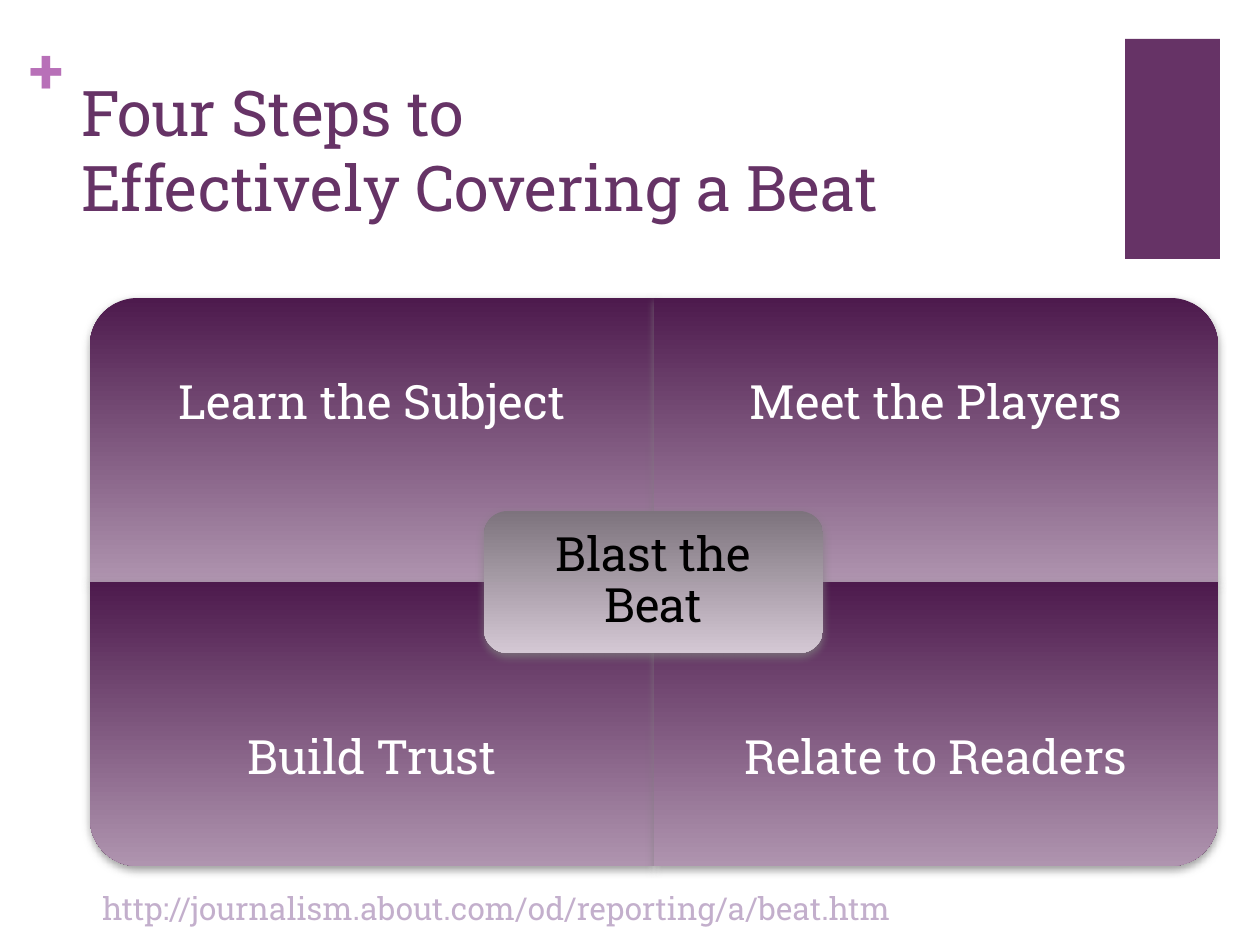
from dataclasses import dataclass

import pptx
import pptx.dml.color
import pptx.enum.shapes
import pptx.enum.text
import pptx.oxml
import pptx.oxml.ns
import pptx.util

RGB = pptx.dml.color.RGBColor
SHAPE = pptx.enum.shapes.MSO_SHAPE
ANCHOR = pptx.enum.text.MSO_ANCHOR
ALIGN = pptx.enum.text.PP_ALIGN

PURPLE = RGB(0x66, 0x33, 0x66)
ORCHID = RGB(0xB8, 0x70, 0xB8)
LILAC = RGB(0xC3, 0xAF, 0xCC)
WHITE = RGB(0xFF, 0xFF, 0xFF)
BLACK = RGB(0x00, 0x00, 0x00)
STEP_COLORS = (RGB(0x4D, 0x1A, 0x4D), RGB(0xAF, 0x94, 0xAF))
HUB_COLORS = (RGB(0x7D, 0x73, 0x7D), RGB(0xD4, 0xC8, 0xD4))

FONT = "Roboto Slab"
EMU_PER_PX = 914400 / 126
GRID_LEFT, GRID_TOP = 90, 298
STEP_W, STEP_H, LABEL_H = 564, 284, 213

SHADOW = (
    f'<a:effectLst {pptx.oxml.ns.nsdecls("a")}>'
    '<a:outerShdw blurRad="63500" dist="25400" dir="5400000" rotWithShape="0">'
    '<a:srgbClr val="808080"><a:alpha val="75000"/></a:srgbClr>'
    "</a:outerShdw></a:effectLst>"
)


@dataclass
class Box:
    left: int
    top: int
    width: int
    height: int

    def emu(self) -> list:
        return [px(v) for v in (self.left, self.top, self.width, self.height)]


@dataclass
class Step:
    label: str
    col: int
    row: int
    rotation: int


STEPS = [
    Step("Learn the Subject", 0, 0, 270),
    Step("Meet the Players", 1, 0, 0),
    Step("Build Trust", 0, 1, 180),
    Step("Relate to Readers", 1, 1, 90),
]


def px(value: float) -> int:
    return pptx.util.Emu(round(value * EMU_PER_PX))


def add_text(slide, box: Box, text: str, size: int, color, bold=None, inset=None, wrap=True):
    sp = slide.shapes.add_textbox(*box.emu())
    tf = sp.text_frame
    tf.word_wrap = wrap
    if inset is not None:
        tf.margin_left = tf.margin_top = tf.margin_right = tf.margin_bottom = px(inset)
    p = tf.paragraphs[0]
    p.text = text
    p.font.name, p.font.size, p.font.bold = FONT, pptx.util.Pt(size), bold
    p.font.color.rgb = color
    return tf


def add_label(slide, box: Box, text: str, color, inset: int) -> None:
    tf = add_text(slide, box, text, 27, color, inset=inset)
    tf.vertical_anchor = ANCHOR.MIDDLE
    p = tf.paragraphs[0]
    p.alignment = ALIGN.CENTER
    p.line_spacing = 0.9


def add_panel(slide, kind, box: Box, colors: tuple, rotation: int = 0) -> None:
    sp = slide.shapes.add_shape(kind, *box.emu())
    sp.rotation = rotation
    sp.line.fill.background()
    sp.fill.gradient()
    sp.fill.gradient_angle = 270
    for stop, color in zip(sp.fill.gradient_stops, colors):
        stop.color.rgb = color
    spPr = sp.element.spPr
    spPr.find(pptx.oxml.ns.qn("a:gradFill")).set("rotWithShape", "0")
    spPr.append(pptx.oxml.parse_xml(SHADOW))


def add_step(slide, step: Step) -> None:
    left = GRID_LEFT + step.col * STEP_W
    top = GRID_TOP + step.row * STEP_H
    w, h = (STEP_H, STEP_W) if step.rotation % 180 else (STEP_W, STEP_H)
    box = Box(left + (STEP_W - w) // 2, top + (STEP_H - h) // 2, w, h)
    add_panel(slide, SHAPE.ROUND_1_RECTANGLE, box, STEP_COLORS, step.rotation)
    label_top = top + step.row * (STEP_H - LABEL_H)
    add_label(slide, Box(left, label_top, STEP_W, LABEL_H), step.label, WHITE, 26)


def main() -> None:
    prs = pptx.Presentation()
    prs.slide_width, prs.slide_height = px(1260), px(945)
    slide = prs.slides.add_slide(prs.slide_layouts[6])

    bar = slide.shapes.add_shape(SHAPE.RECTANGLE, *Box(1125, 39, 95, 220).emu())
    bar.shadow.inherit = False
    bar.fill.solid()
    bar.fill.fore_color.rgb = PURPLE
    bar.line.fill.background()

    add_text(slide, Box(30, 31, 37, 77), "+", 36, ORCHID, bold=True, inset=0)
    title = "Four Steps to\vEffectively Covering a Beat"
    add_text(slide, Box(69, 67, 1041, 154), title, 36, PURPLE)

    for step in STEPS:
        add_step(slide, step)

    add_panel(slide, SHAPE.ROUNDED_RECTANGLE, Box(484, 511, 339, 142), HUB_COLORS)
    add_label(slide, Box(491, 518, 325, 128), "Blast the Beat", BLACK, 14)

    url = "http://journalism.about.com/od/reporting/a/beat.htm"
    add_text(slide, Box(90, 883, 819, 50), url, 18, LILAC, wrap=False)

    prs.save("out.pptx")


if __name__ == "__main__":
    main()
